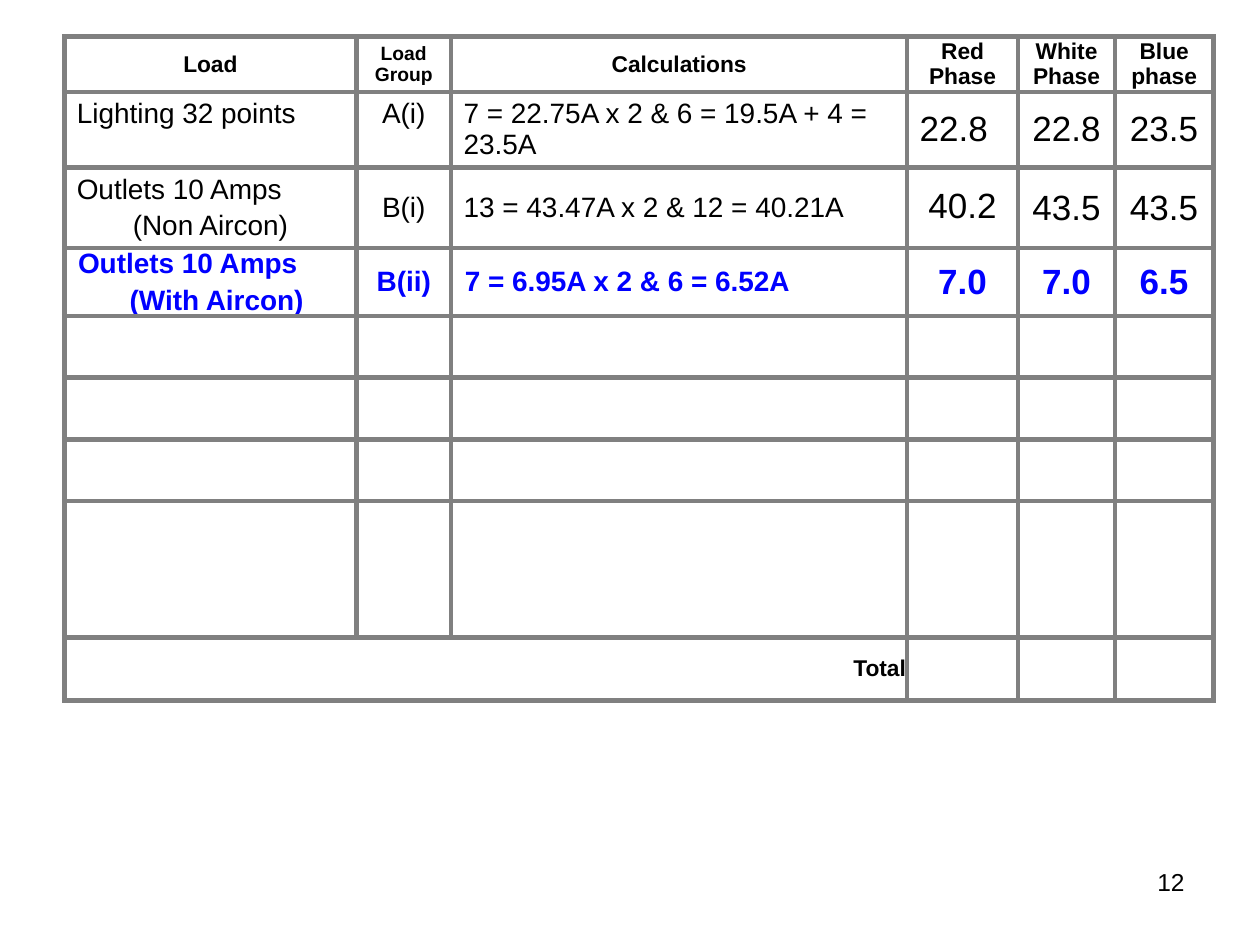
from dataclasses import dataclass

from lxml import etree
from pptx import Presentation
from pptx.dml.color import RGBColor
from pptx.enum.text import MSO_ANCHOR, PP_ALIGN
from pptx.oxml.ns import qn
from pptx.table import Table, _Cell
from pptx.text.text import _Paragraph
from pptx.util import Inches, Pt

LEFT, CENTER, RIGHT = PP_ALIGN.LEFT, PP_ALIGN.CENTER, PP_ALIGN.RIGHT
TOP, MIDDLE = MSO_ANCHOR.TOP, MSO_ANCHOR.MIDDLE

FONT = "Arial"
BLACK, BLUE, WHITE, GRAY = "000000", "0000FF", "FFFFFF", "808080"
BORDER_POINTS = 3
COLUMN_WIDTHS = [2.32, 0.75, 3.62, 0.88, 0.77, 0.78]
ROW_HEIGHTS = [0.44, 0.6, 0.63, 0.54, 0.49, 0.49, 0.49, 1.08, 0.5]
TOTAL_ROW = len(ROW_HEIGHTS) - 1
WIDE_MARGINS = (0.1, 0.05, 0.1, 0.05)
TIGHT_MARGINS = (0.01, 0, 0.01, 0)
INDENTED_MARGINS = (0.11, 0, 0.01, 0)


@dataclass
class Entry:
    """Text and format of one table cell; a second line is centred."""
    text: str
    size: float = 16
    align: PP_ALIGN = CENTER
    anchor: MSO_ANCHOR = MIDDLE
    margins: tuple = WIDE_MARGINS
    color: str = BLACK
    bold: bool = False
    spacing: float = 0.2
    line_spacing: float = 1.0


def heading(text: str, size: float = 13, align: PP_ALIGN = CENTER) -> Entry:
    return Entry(text, size, align, margins=TIGHT_MARGINS, bold=True, spacing=0)


def highlight(text: str, size: float = 16, align: PP_ALIGN = CENTER,
              margins: tuple = TIGHT_MARGINS, spacing: float = 0) -> Entry:
    return Entry(text, size, align, margins=margins, color=BLUE, bold=True,
                 spacing=spacing)


ENTRIES = [
    [heading("Load"), heading("Load Group", 11), heading("Calculations"),
     heading("Red Phase"), heading("White Phase"), heading("Blue phase")],
    [Entry("Lighting 32 points", align=LEFT, anchor=TOP),
     Entry("A(i)", anchor=TOP),
     Entry("7 = 22.75A x 2 & 6 = 19.5A + 4 = 23.5A", align=LEFT, anchor=TOP),
     Entry("22.8", 20, LEFT), Entry("22.8", 20), Entry("23.5", 20)],
    [Entry("Outlets 10 Amps\n(Non Aircon)", align=LEFT),
     Entry("B(i)"),
     Entry("13 = 43.47A x 2 & 12 = 40.21A", align=LEFT),
     Entry("40.2", 20, line_spacing=0.9), Entry("43.5", 20),
     Entry("43.5", 20, margins=TIGHT_MARGINS, spacing=0)],
    [highlight("Outlets 10 Amps\n(With Aircon)", align=LEFT,
               margins=INDENTED_MARGINS, spacing=0.2),
     highlight("B(ii)"),
     highlight("7 = 6.95A x 2 & 6 = 6.52A", align=LEFT, margins=INDENTED_MARGINS),
     highlight("7.0", 20), highlight("7.0", 20), highlight("6.5", 20)],
]


def rgb(color: str) -> RGBColor:
    return RGBColor.from_string(color)


def format_runs(paragraph: _Paragraph, size: float, color: str = BLACK,
                bold: bool = False) -> None:
    for run in paragraph.runs:
        run.font.name = FONT
        run.font.size = Pt(size)
        run.font.bold = bold
        run.font.color.rgb = rgb(color)


def set_borders(cell: _Cell) -> None:
    properties = cell._tc.get_or_add_tcPr()
    for position, side in enumerate(("a:lnL", "a:lnR", "a:lnT", "a:lnB")):
        line = etree.Element(qn(side), w=str(Pt(BORDER_POINTS)))
        fill = etree.SubElement(line, qn("a:solidFill"))
        etree.SubElement(fill, qn("a:srgbClr"), val=GRAY)
        properties.insert(position, line)


def write_entry(cell: _Cell, entry: Entry) -> None:
    cell.vertical_anchor = entry.anchor
    (cell.margin_left, cell.margin_top,
     cell.margin_right, cell.margin_bottom) = map(Inches, entry.margins)
    cell.text_frame.text = entry.text
    for index, paragraph in enumerate(cell.text_frame.paragraphs):
        paragraph.alignment = entry.align if index == 0 else CENTER
        paragraph.space_before = Pt(entry.size * entry.spacing)
        paragraph.line_spacing = entry.line_spacing
        format_runs(paragraph, entry.size, entry.color, entry.bold)


def fill_table(table: Table) -> None:
    table.first_row = table.horz_banding = False
    for column, width in zip(table.columns, COLUMN_WIDTHS):
        column.width = Inches(width)
    for row, height in zip(table.rows, ROW_HEIGHTS):
        row.height = Inches(height)
    for cell in table.iter_cells():
        cell.fill.solid()
        cell.fill.fore_color.rgb = rgb(WHITE)
        set_borders(cell)
    for row, entries in zip(table.rows, ENTRIES):
        for cell, entry in zip(row.cells, entries):
            write_entry(cell, entry)
    # Total label spans the three descriptive columns
    total_cell = table.cell(TOTAL_ROW, 0)
    total_cell.merge(table.cell(TOTAL_ROW, 2))
    write_entry(total_cell, heading("Total", align=RIGHT))


def main() -> None:
    presentation = Presentation()
    presentation.slide_width = Inches(10)
    presentation.slide_height = Inches(7.5)
    slide = presentation.slides.add_slide(presentation.slide_layouts[6])

    # Load schedule
    frame = slide.shapes.add_table(
        len(ROW_HEIGHTS), len(COLUMN_WIDTHS), Inches(0.51), Inches(0.29),
        Inches(sum(COLUMN_WIDTHS)), Inches(sum(ROW_HEIGHTS)))
    fill_table(frame.table)

    # Page number
    page_number = slide.shapes.add_textbox(
        Inches(7.17), Inches(6.83), Inches(2.33), Inches(0.52))
    page_number.text_frame.word_wrap = True
    page_number.text_frame.text = "12"
    paragraph = page_number.text_frame.paragraphs[0]
    paragraph.alignment = RIGHT
    format_runs(paragraph, 14)

    presentation.save("out.pptx")


if __name__ == "__main__":
    main()
